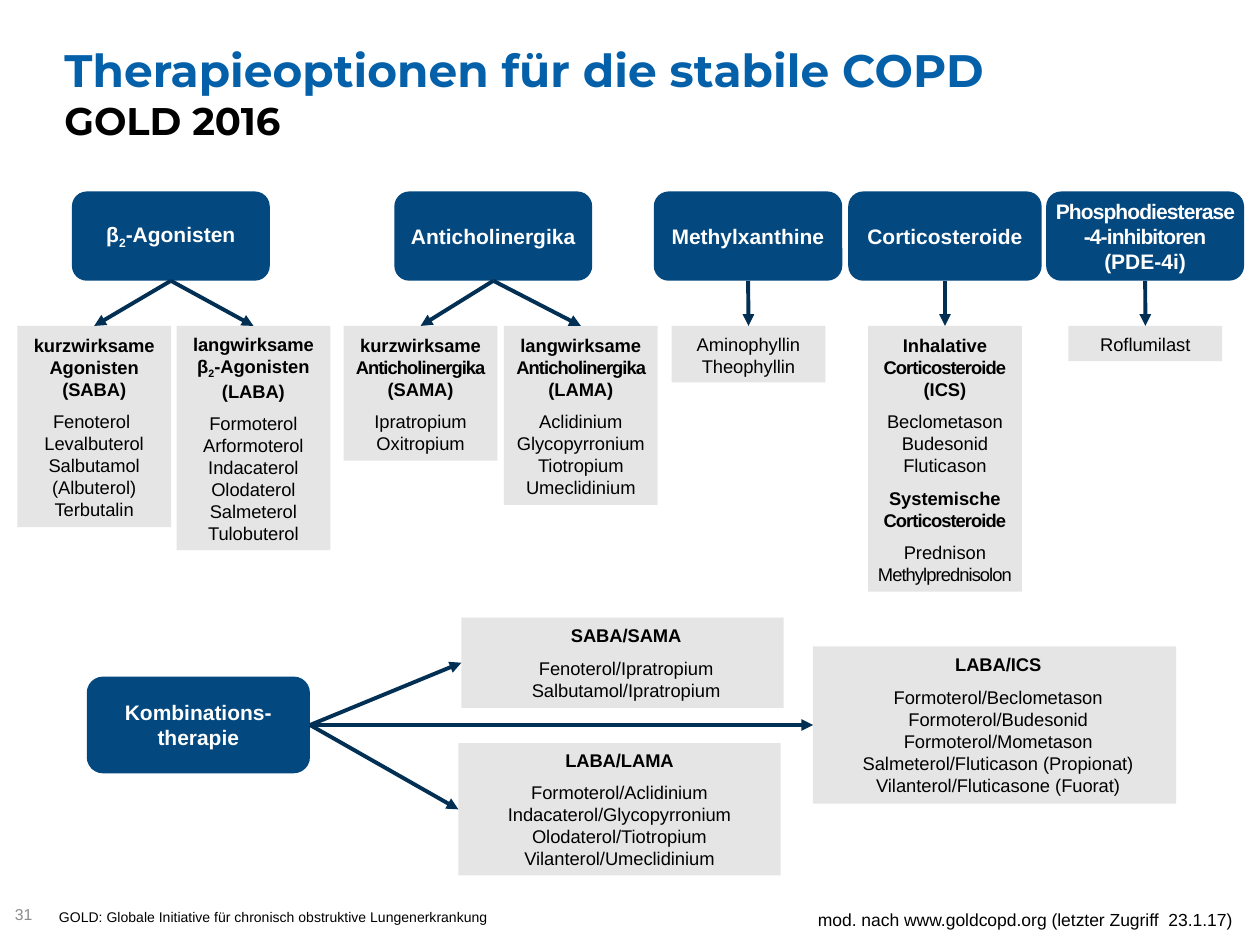
from lxml.etree import SubElement
from pptx import Presentation
from pptx.dml.color import RGBColor
from pptx.enum.shapes import MSO_CONNECTOR, MSO_SHAPE
from pptx.enum.text import MSO_ANCHOR, PP_ALIGN
from pptx.oxml.ns import qn
from pptx.util import Cm, Pt

BLUE = RGBColor(0x04, 0x60, 0xA9)
DARK_BLUE = RGBColor(0x03, 0x48, 0x7F)
NAVY = RGBColor(0x02, 0x30, 0x54)
LIGHT_GRAY = RGBColor(0xE5, 0xE5, 0xE5)
GRAY = RGBColor(0x8C, 0x8C, 0x8C)
BLACK = RGBColor(0, 0, 0)
WHITE = RGBColor(0xFF, 0xFF, 0xFF)
TOP, LEFT, BOTTOM, RIGHT = range(4)


def write_text(shape, paragraphs, size=10.5, color=BLACK, font="Arial", align=PP_ALIGN.CENTER,
               margins=(0.1, 0.13, 0.1, 0.1), anchor=MSO_ANCHOR.MIDDLE, after=0, spacing=1.0, wrap=True):
    frame = shape.text_frame
    frame.word_wrap = wrap
    frame.vertical_anchor = anchor
    frame.margin_left, frame.margin_top, frame.margin_right, frame.margin_bottom = map(Cm, margins)
    for index, text in enumerate(paragraphs):
        paragraph = frame.add_paragraph() if index or frame.text else frame.paragraphs[0]
        paragraph.alignment = align
        paragraph.space_after = Pt(after)
        paragraph.line_spacing = spacing
        bold = text.startswith("*")
        for part in text.removeprefix("*").split("|"):
            for number, line in enumerate(part.lstrip("_~").split("\n")):
                if number:
                    paragraph.add_line_break()
                run = paragraph.add_run()
                run.text = line
                run.font.size = Pt(size)
                run.font.name = font
                run.font.bold = bold
                run.font.color.rgb = color
                if part.startswith("_"):
                    run.font._element.set("baseline", "-25000")
                if part.startswith("~"):
                    run.font._element.set("spc", "-50")


def add_box(kind, left, top, width, height, fill):
    shape = slide.shapes.add_shape(kind, Cm(left), Cm(top), Cm(width), Cm(height))
    shape.shadow.inherit = False
    shape.fill.solid()
    shape.fill.fore_color.rgb = fill
    shape.line.fill.background()
    return shape


presentation = Presentation()
presentation.slide_width = Cm(25.4)
presentation.slide_height = Cm(19.05)
slide = presentation.slides.add_slide(presentation.slide_layouts[6])

title = slide.shapes.add_textbox(Cm(1.3), Cm(0.53), Cm(22.8), Cm(2.67))
for text, size, color in (("*Therapieoptionen für die stabile COPD", 26, BLUE), ("*GOLD 2016", 22, BLACK)):
    write_text(title, [text], size=size, color=color, font="Montserrat", align=PP_ALIGN.LEFT,
               margins=(0, 0, 0, 0))

HEAD_TOP, HEAD_HEIGHT = 3.86, 1.8
DRUG_TOP, DRUG_WIDTH = 6.57, 3.1
WIDE, NARROW = (0.25, 0.13, 0.25, 0.13), (0.1, 0.13, 0.1, 0.13)

drug_classes = [
    ("*β|_2|-Agonisten", 1.45, 3.99, WIDE, [
        (0.35, 4.06, ["*kurzwirksame Agonisten\n(SABA)",
                      "Fenoterol \nLevalbuterol Salbutamol (Albuterol) Terbutalin"]),
        (3.56, 4.52, ["*langwirksame\nβ|_2|-Agonisten (LABA)",
                      "Formoterol\nArformoterol\nIndacaterol\nOlodaterol\nSalmeterol\nTulobuterol"])]),
    ("*Anticholinergika", 7.95, 3.99, (0.2, 0.13, 0.2, 0.13), [
        (6.93, 2.72, ["*kurzwirksame |~Anticholinergika| (SAMA)", "Ipratropium\nOxitropium"]),
        (10.16, 3.61, ["*langwirksame |~Anticholinergika |(LAMA)",
                       "Aclidinium\nGlycopyrronium\nTiotropium\nUmeclidinium"])]),
    ("*Methylxanthine", 13.18, 3.8, WIDE, [(13.54, 1.14, ["Aminophyllin\nTheophyllin"])]),
    ("*Corticosteroide", 17.1, 3.9, WIDE, [
        (17.5, 5.36, ["*Inhalative |~Corticosteroide| (ICS)", "Beclometason\nBudesonid\nFluticason",
                      "*Systemische |~Corticosteroide", "Prednison\n|~Methylprednisolon"])]),
    ("*~Phosphodiesterase-4-inhibitoren| (PDE-4i)", 21.09, 3.99, NARROW, [(21.54, 0.71, ["Roflumilast"])]),
]

links = []
for name, left, width, margins, groups in drug_classes:
    head = add_box(MSO_SHAPE.ROUNDED_RECTANGLE, left, HEAD_TOP, width, HEAD_HEIGHT, DARK_BLUE)
    write_text(head, [name], size=12, color=WHITE, margins=margins)
    for drug_left, drug_height, drugs in groups:
        drug_box = add_box(MSO_SHAPE.RECTANGLE, drug_left, DRUG_TOP, DRUG_WIDTH, drug_height, LIGHT_GRAY)
        write_text(drug_box, drugs, after=6)
        links.append((head, BOTTOM, drug_box, TOP))

combination = add_box(MSO_SHAPE.ROUNDED_RECTANGLE, 1.75, 13.64, 4.5, 1.95, DARK_BLUE)
write_text(combination, ["*Kombinations-therapie"], size=12, color=WHITE, margins=NARROW)

combinations = [
    (9.3, 12.45, 6.5, 1.82, 0.25, ["*SABA/SAMA", "Fenoterol/Ipratropium\nSalbutamol/Ipratropium"]),
    (16.39, 13.03, 7.32, 3.17, 0.25, [
        "*LABA/ICS",
        "Formoterol/Beclometason\nFormoterol/Budesonid\nFormoterol/Mometason\n"
        "Salmeterol/Fluticason (Propionat)\nVilanterol/Fluticasone (Fuorat)"]),
    (9.24, 14.98, 6.5, 2.67, 0.1, [
        "*LABA/LAMA",
        "Formoterol/Aclidinium\nIndacaterol/Glycopyrronium\nOlodaterol/Tiotropium\nVilanterol/Umeclidinium"]),
]
for left, top, width, height, margin, drugs in combinations:
    drug_box = add_box(MSO_SHAPE.RECTANGLE, left, top, width, height, LIGHT_GRAY)
    write_text(drug_box, drugs, after=6, margins=(margin, 0.13, 0.1, 0.13))
    links.append((combination, RIGHT, drug_box, LEFT))

for start, start_side, end, end_side in links:
    arrow = slide.shapes.add_connector(MSO_CONNECTOR.STRAIGHT, 0, 0, 0, 0)
    arrow.begin_connect(start, start_side)
    arrow.end_connect(end, end_side)
    arrow.line.color.rgb = NAVY
    arrow.line.width = Pt(2.25)
    SubElement(arrow.line._get_or_add_ln(), qn("a:tailEnd"), type="triangle")
    SubElement(arrow._element.spPr, qn("a:effectLst"))

footers = [
    ("31", 0, 17.93, 0.79, 1.02, dict(
        size=9, color=GRAY, align=PP_ALIGN.LEFT, margins=(0.3, 0.13, 0.13, 0.13), wrap=False)),
    ("GOLD: Globale Initiative für chronisch obstruktive Lungenerkrankung", 0.94, 18.19, 12.7, 0.6, dict(
        size=8, align=PP_ALIGN.LEFT, margins=WIDE, anchor=MSO_ANCHOR.TOP)),
    ("mod. nach www.goldcopd.org (letzter Zugriff  23.1.17)", 15.82, 18.16, 9.27, 0.74, dict(
        size=10, align=PP_ALIGN.RIGHT, margins=WIDE, anchor=MSO_ANCHOR.TOP, spacing=1.1)),
]
for text, left, top, width, height, text_format in footers:
    footer = slide.shapes.add_textbox(Cm(left), Cm(top), Cm(width), Cm(height))
    write_text(footer, [text], **text_format)

presentation.save("out.pptx")
